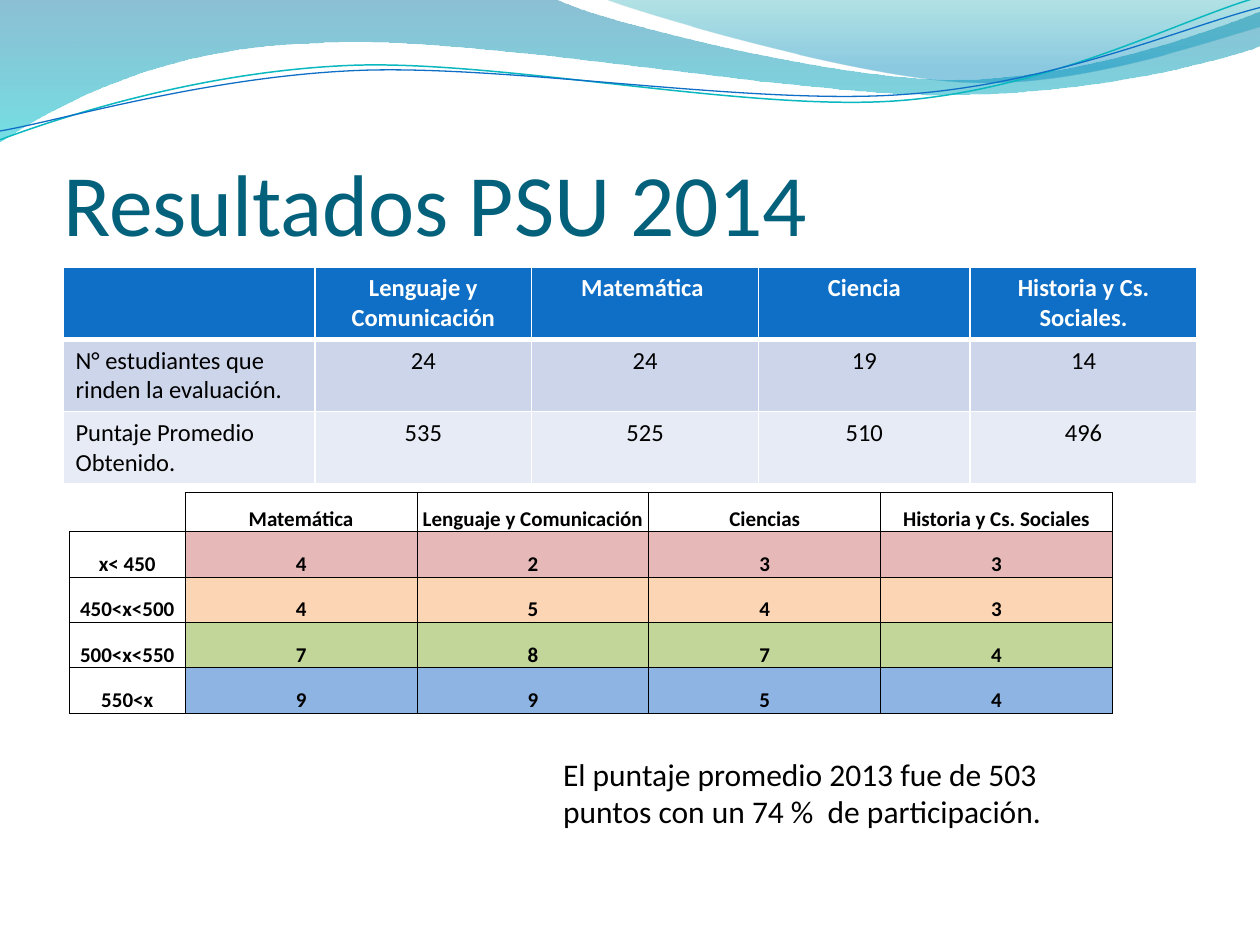
from lxml import etree
from pptx import Presentation
from pptx.dml.color import RGBColor
from pptx.enum.text import MSO_ANCHOR, PP_ALIGN
from pptx.oxml.ns import qn
from pptx.util import Inches, Pt

LEFT, CENTER = PP_ALIGN.LEFT, PP_ALIGN.CENTER
TOP, BOTTOM = MSO_ANCHOR.TOP, MSO_ANCHOR.BOTTOM
FONT = "Calibri"

WHITE = RGBColor(0xFF, 0xFF, 0xFF)
BLACK = RGBColor(0, 0, 0)
NAVY = RGBColor(0x04, 0x61, 0x7B)
BLUE = RGBColor(0x0F, 0x6F, 0xC6)
TEAL = RGBColor(0x0A, 0xB8, 0xBF)
DEEP = RGBColor(0x00, 0x74, 0xA1)
CYAN = RGBColor(0x00, 0xC6, 0xCF)
SEA = RGBColor(0x00, 0xA1, 0xA9)
SKY = RGBColor(0x00, 0x8B, 0xBF)
MIST = RGBColor(0xCC, 0xD5, 0xEA)
PALE = RGBColor(0xE7, 0xEB, 0xF5)
ROSE = RGBColor(0xE6, 0xB9, 0xB8)
PEACH = RGBColor(0xFC, 0xD5, 0xB4)
GREEN = RGBColor(0xC2, 0xD6, 0x9A)
AZURE = RGBColor(0x8D, 0xB4, 0xE3)

TITLE = "Resultados PSU 2014"
NOTE = "El puntaje promedio 2013 fue de 503 puntos con un 74 %  de participación."

SCORES = [
    ["", "Lenguaje y Comunicación", "Matemática ", "Ciencia", "Historia y Cs. Sociales."],
    ["N° estudiantes que rinden la evaluación.", "24", "24", "19", "14"],
    ["Puntaje Promedio Obtenido.", "535", "525", "510", "496"],
]
SCORE_FILLS = [BLUE, MIST, PALE]

RANGES = [
    ["", "Matemática", "Lenguaje y Comunicación", "Ciencias", "Historia y Cs. Sociales"],
    ["x< 450", "4", "2", "3", "3"],
    ["450<x<500", "4", "5", "4", "3"],
    ["500<x<550", "7", "8", "7", "4"],
    ["550<x", "9", "9", "5", "4"],
]
RANGE_FILLS = [None, ROSE, PEACH, GREEN, AZURE]

BANDS = [
    ((0, 0),
     [[(4.4, -0.01)],
      [(4.76, 0.17), (6.64, 0.63), (7.58, 0.63)],
      [(8.53, 0.63), (9.58, 0.26), (10, 0.09)],
      [(10.01, 0.36)],
      [(9.83, 0.44), (8.7, 0.76), (7.46, 0.75)],
      [(6.22, 0.75), (3.82, 0.28), (2.57, 0.34)],
      [(1.29, 0.36), (0.46, 0.83), (-0.01, 1.13)],
      [(0, 0)]],
     [(0, DEEP, 45), (100, CYAN, 55)]),
    ((4.79, -0.01),
     [[(5.09, 0.11), (6.82, 0.62), (7.69, 0.65)],
      [(8.56, 0.69), (9.61, 0.32), (10, 0.21)],
      [(10, 0)],
      [(4.79, -0.01)]],
     [(0, SEA, 30), (80, SKY, 45)]),
]
WAVES = [
    ((0, 1.11),
     [[(0.48, 0.93), (1.58, 0.57), (2.77, 0.52)],
      [(3.95, 0.47), (5.93, 0.89), (7.13, 0.8)],
      [(8.33, 0.71), (9.38, 0.15), (9.98, -0.02)]], TEAL, 0.85),
    ((0, 1.04),
     [[(0.47, 0.96), (1.64, 0.61), (2.83, 0.56)],
      [(4.03, 0.51), (5.97, 0.84), (7.17, 0.75)],
      [(8.36, 0.67), (9.41, 0.21), (10, 0.06)]], BLUE, 0.75),
]


def outline(slide, start, parts, close):
    ends = [tuple(map(Inches, part[-1])) for part in parts]
    pen = slide.shapes.build_freeform(*map(Inches, start))
    pen.add_line_segments(ends, close=close)
    shape = pen.convert_to_shape()
    shape.shadow.inherit = False
    lines = list(shape._element.spPr.iter(qn("a:lnTo")))
    for line, part in zip(lines, parts):
        if len(part) == 3:
            bend = etree.Element(qn("a:cubicBezTo"))
            for x, y in part:
                etree.SubElement(bend, qn("a:pt"), x=str(Inches(x) - shape.left),
                                 y=str(Inches(y) - shape.top))
            line.getparent().replace(line, bend)
    return shape


def add_band(slide, start, parts, stops):
    shape = outline(slide, start, parts, True)
    shape.line.fill.background()
    shape.fill.gradient()
    shape.fill.gradient_angle = 270
    marks = shape._element.spPr.iter(qn("a:gs"))
    for stop, mark, (place, color, alpha) in zip(shape.fill.gradient_stops, marks, stops):
        stop.color.rgb = color
        stop.position = place / 100
        etree.SubElement(mark[0], qn("a:alpha"), val=str(alpha * 1000))


def add_wave(slide, start, parts, color, width):
    shape = outline(slide, start, parts, False)
    shape.fill.background()
    shape.line.color.rgb = color
    shape.line.width = Pt(width)


def style(para, size, color, bold=False, align=LEFT):
    para.alignment = align
    font = para.font
    font.name, font.size, font.bold = FONT, Pt(size), bold
    font.color.rgb = color


def set_edges(cell, color, widths):
    props = cell._tc.get_or_add_tcPr()
    for i, (side, width) in enumerate(zip("LRTB", widths)):
        line = etree.Element(qn("a:ln" + side), w=str(Pt(width)))
        if width:
            solid = etree.SubElement(line, qn("a:solidFill"))
            etree.SubElement(solid, qn("a:srgbClr"), val=str(color))
        else:
            etree.SubElement(line, qn("a:noFill"))
        props.insert(i, line)


def add_grid(slide, data, spot, cols, rows):
    box = slide.shapes.add_table(len(rows), len(cols), *map(Inches, spot))
    grid = box.table
    grid.first_row = grid.horz_banding = False
    for col, width in zip(grid.columns, cols):
        col.width = Inches(width)
    for row, height in zip(grid.rows, rows):
        row.height = Inches(height)
    box.height = Inches(spot[3])
    for r, line in enumerate(data):
        for c, text in enumerate(line):
            cell = grid.cell(r, c)
            if text:
                cell.text = text
            yield r, c, cell


def add_scores(slide):
    spot = (0.5, 2.12, 9, 1.7)
    for r, c, cell in add_grid(slide, SCORES, spot, [2, 1.72, 1.8, 1.68, 1.8], [0.41] * 3):
        head = r == 0
        style(cell.text_frame.paragraphs[0], 14, WHITE if head else BLACK, head,
              CENTER if c else LEFT)
        cell.fill.solid()
        cell.fill.fore_color.rgb = SCORE_FILLS[r]
        set_edges(cell, WHITE, (1, 1, 3 if r == 1 else 1, 3 if head else 1))


def add_ranges(slide):
    spot = (0.55, 3.91, 8.28, 1.75)
    for r, c, cell in add_grid(slide, RANGES, spot, [0.92] + [1.84] * 4, [0.31] + [0.36] * 4):
        style(cell.text_frame.paragraphs[0], 12, BLACK, True, CENTER)
        cell.vertical_anchor = BOTTOM
        cell.margin_left = cell.margin_right = cell.margin_top = Inches(0.01)
        cell.margin_bottom = 0
        if r and c:
            cell.fill.solid()
            cell.fill.fore_color.rgb = RANGE_FILLS[r]
        else:
            cell.fill.background()
        outer = 0.5 if r or c else 0
        set_edges(cell, BLACK, (outer, 0.5, outer, 0.5))


def put_text(shape, text, spot, size, color, anchor):
    shape.left, shape.top, shape.width, shape.height = map(Inches, spot)
    frame = shape.text_frame
    frame.text = text
    frame.word_wrap = True
    frame.vertical_anchor = anchor
    style(frame.paragraphs[0], size, color)
    return frame


def main():
    deck = Presentation()
    deck.slide_width, deck.slide_height = Inches(10), Inches(7.5)
    slide = deck.slides.add_slide(deck.slide_layouts[5])
    for band in BANDS:
        add_band(slide, *band)
    for wave in WAVES:
        add_wave(slide, *wave)
    frame = put_text(slide.shapes.title, TITLE, (0.5, 0.77, 9, 1.25), 50, NAVY, BOTTOM)
    frame.margin_left = frame.margin_right = frame.margin_bottom = 0
    add_scores(slide)
    add_ranges(slide)
    note = slide.shapes.add_textbox(0, 0, 0, 0)
    put_text(note, NOTE, (4.37, 5.94, 4.45, 0.71), 18, BLACK, TOP)
    deck.save("out.pptx")


if __name__ == "__main__":
    main()
